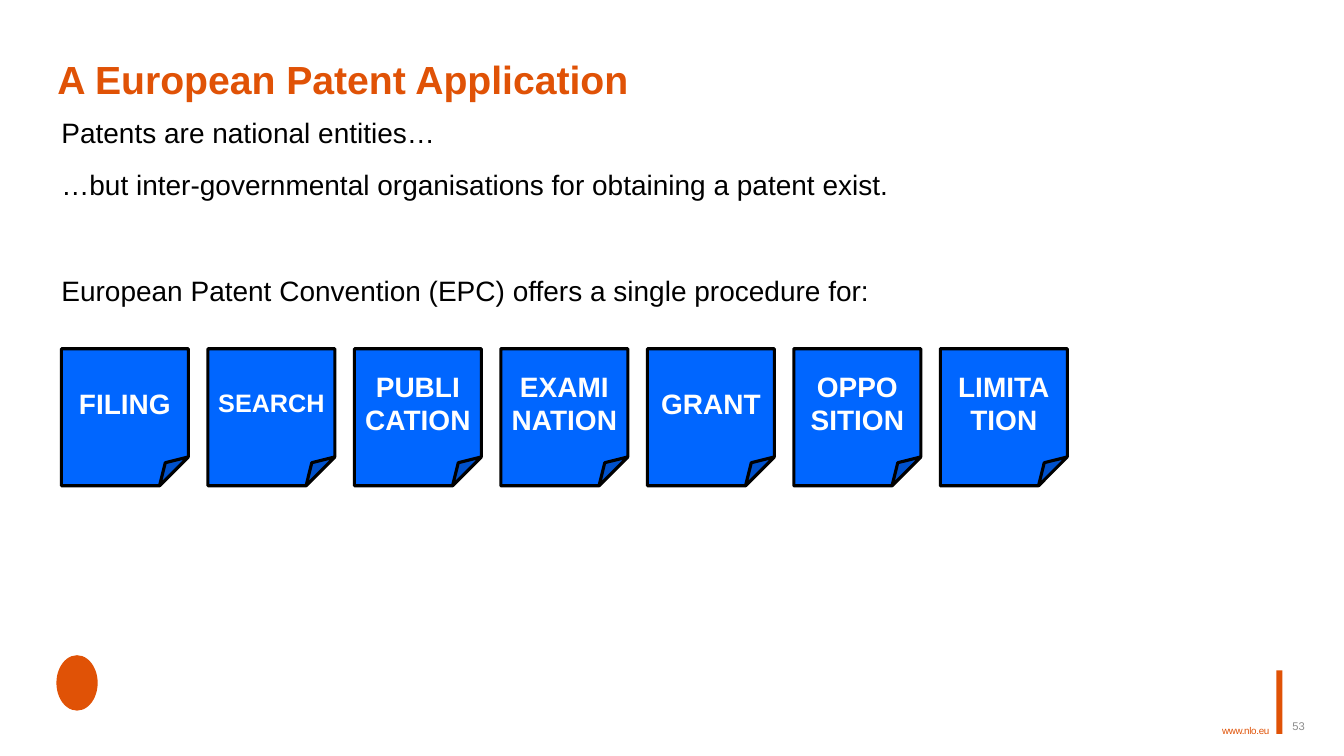
from dataclasses import dataclass

import lxml.etree
import pptx
import pptx.dml.color
import pptx.enum.shapes
import pptx.enum.text
import pptx.oxml.ns
import pptx.util

SLIDE_W = pptx.util.Inches(13.34)
SLIDE_H = pptx.util.Inches(7.5)
FONT = "Arial"
COLORS = {
    "orange": "E05206",
    "blue": "0066FF",
    "black": "000000",
    "white": "FFFFFF",
    "grey": "8C8C8C",
}
SHAPE = pptx.enum.shapes.MSO_SHAPE
ANCHOR = pptx.enum.text.MSO_ANCHOR
ALIGN = pptx.enum.text.PP_ALIGN


@dataclass(frozen=True)
class Box:
    """Left, top, width and height in percent of the slide."""

    x: float
    y: float
    w: float
    h: float

    def emu(self) -> tuple[int, int, int, int]:
        return (
            round(SLIDE_W * self.x / 100),
            round(SLIDE_H * self.y / 100),
            round(SLIDE_W * self.w / 100),
            round(SLIDE_H * self.h / 100),
        )


@dataclass(frozen=True)
class Step:
    lines: tuple[str, ...]
    size: float = 20


STEPS = (
    Step(("FILING",)),
    Step(("SEARCH",), size=18),
    Step(("PUBLI", "CATION")),
    Step(("EXAMINATION",)),
    Step(("GRANT",)),
    Step(("OPPO", "SITION")),
    Step(("LIMITA", "TION")),
)
FIRST_CARD = Box(4.57, 46.13, 9.45, 18.13)
CARD_PITCH = 10.9
CARD_FOLD = 22700

BODY_LINES = (
    "Patents are national entities…",
    "…but inter-governmental organisations for obtaining a patent exist.",
    "European Patent Convention (EPC) offers a single procedure for:",
)
BODY_SPACE_BEFORE = (0, 8, 46)


def rgb(name: str) -> pptx.dml.color.RGBColor:
    return pptx.dml.color.RGBColor.from_string(COLORS[name])


def write(sp, lines, *, size: float, color: str, bold: bool = False,
          align=ALIGN.LEFT, anchor=ANCHOR.TOP, inset: tuple[float, float] = (0, 0),
          line_spacing: float = 1.0, before: tuple[float, ...] = (),
          after: float = 0, tracking: float = 0) -> None:
    tf = sp.text_frame
    tf.word_wrap = True
    tf.vertical_anchor = anchor
    tf.margin_left = tf.margin_right = pptx.util.Inches(inset[0])
    tf.margin_top = tf.margin_bottom = pptx.util.Inches(inset[1])
    for i, line in enumerate(lines):
        p = tf.paragraphs[0] if i == 0 else tf.add_paragraph()
        p.alignment = align
        p.line_spacing = line_spacing
        p.space_before = pptx.util.Pt(before[i] if before else 0)
        p.space_after = pptx.util.Pt(after)
        r = p.add_run()
        r.text = line
        r.font.name = FONT
        r.font.size = pptx.util.Pt(size)
        r.font.bold = bold
        r.font.color.rgb = rgb(color)
        if tracking:
            r.font._element.set("spc", str(round(tracking * 100)))


def add_text(slide, box: Box, lines, **fmt) -> None:
    write(slide.shapes.add_textbox(*box.emu()), lines, **fmt)


def add_filled(slide, kind, box: Box, fill: str, line: str | None = None):
    sp = slide.shapes.add_shape(kind, *box.emu())
    sp.shadow.inherit = False
    sp.fill.solid()
    sp.fill.fore_color.rgb = rgb(fill)
    if line:
        sp.line.color.rgb = rgb(line)
        sp.line.width = pptx.util.Pt(2.25)
    else:
        sp.line.fill.background()
    return sp


def set_fold(sp, value: int) -> None:
    qn = pptx.oxml.ns.qn
    guides = next(sp._element.iter(qn("a:avLst")))
    for guide in list(guides):
        guides.remove(guide)
    lxml.etree.SubElement(guides, qn("a:gd"), name="adj", fmla=f"val {value}")


def add_step(slide, index: int, step: Step) -> None:
    first = FIRST_CARD
    box = Box(first.x + index * CARD_PITCH, first.y, first.w, first.h)
    sp = add_filled(slide, SHAPE.FOLDED_CORNER, box, "blue", "black")
    set_fold(sp, CARD_FOLD)
    write(sp, step.lines, size=step.size, color="white", bold=True,
          align=ALIGN.CENTER, anchor=ANCHOR.MIDDLE, inset=(0.1, 0.05))


def main() -> None:
    prs = pptx.Presentation()
    prs.slide_width = SLIDE_W
    prs.slide_height = SLIDE_H
    slide = prs.slides.add_slide(prs.slide_layouts[6])

    add_text(slide, Box(90.93, 96, 3.97, 2.27), ["www.nlo.eu"], size=7,
             color="orange", line_spacing=0.9, tracking=-0.2)
    add_filled(slide, SHAPE.RECTANGLE, Box(94.98, 88.67, 0.45, 8.4), "orange")
    add_filled(slide, SHAPE.OVAL, Box(4.2, 86.67, 3.07, 7.33), "orange")
    add_text(slide, Box(4.57, 15.73, 90.93, 25.87), BODY_LINES, size=20,
             color="black", line_spacing=0.9, before=BODY_SPACE_BEFORE, after=8)
    add_text(slide, Box(4.27, 6.93, 91.45, 7.73), ["A European Patent Application"],
             size=28, color="orange", bold=True, anchor=ANCHOR.MIDDLE,
             line_spacing=0.9)
    for index, step in enumerate(STEPS):
        add_step(slide, index, step)
    add_text(slide, Box(95.43, 93.33, 3.9, 5.33), ["53"], size=8, color="grey",
             anchor=ANCHOR.MIDDLE, inset=(0.1, 0.05))

    prs.save("out.pptx")


if __name__ == "__main__":
    main()
